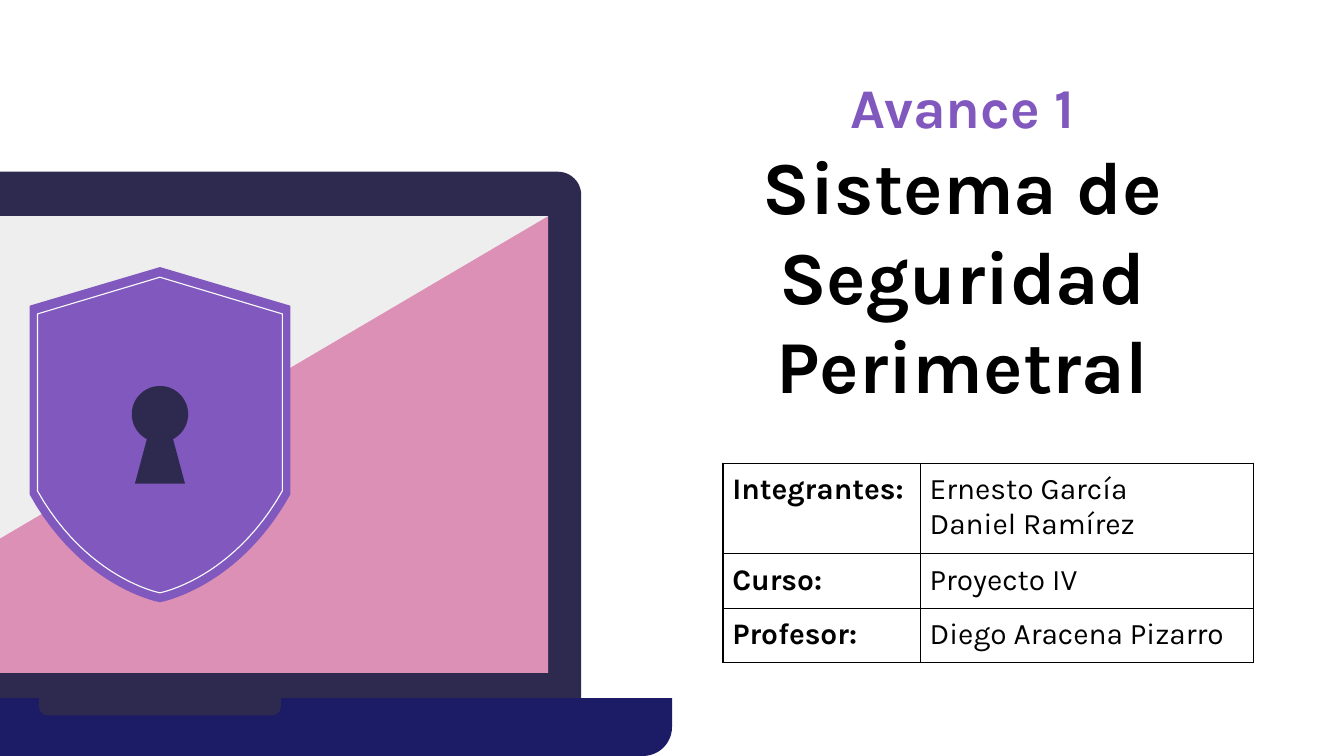
import math

import pptx
import pptx.dml.color
import pptx.enum.shapes
import pptx.enum.text
import pptx.oxml
import pptx.oxml.ns
import pptx.util

Pt = pptx.util.Pt
Shape = pptx.enum.shapes.MSO_SHAPE
Align = pptx.enum.text.PP_ALIGN

COLORS = {
    "black": "000000",
    "frame": "2E294E",
    "base": "1C1C66",
    "pink": "DD90B6",
    "glare": "EEEEEE",
    "purple": "8058BE",
    "outline": "FCFCFC",
}


def rgb(name):
    return pptx.dml.color.RGBColor.from_string(COLORS[name])


def bezier(start, control1, control2, end, steps=24):
    """Points along a cubic curve, both ends included."""
    points = []
    for step in range(steps + 1):
        t = step / steps
        weights = ((1 - t) ** 3, 3 * t * (1 - t) ** 2, 3 * t * t * (1 - t), t ** 3)
        curve = (start, control1, control2, end)
        points.append(tuple(sum(w * p[axis] for w, p in zip(weights, curve))
                            for axis in (0, 1)))
    return points


def mirrored(left_side, center):
    """Close a left-hand outline with its reflection about x = center."""
    return left_side + [(2 * center - x, y) for x, y in reversed(left_side)]


def shield(center, half, top, shoulder, waist, control, tip):
    """Shield outline; control is the curve's handle as (offset, y)."""
    end = (center, tip)
    curve = bezier((center - half, waist), (center - control[0], control[1]), end, end)
    return mirrored([(center, top), (center - half, shoulder)] + curve, center)


def keyhole(center, middle, radius, neck, foot, bottom):
    """Round head on a flared foot; neck and foot are half widths."""
    opening = math.asin(neck / radius)
    angles = [math.pi + (opening - math.pi) * step / 30 for step in range(31)]
    head = [(center - radius * math.sin(a), middle + radius * math.cos(a)) for a in angles]
    return mirrored(head + [(center - foot, bottom)], center)


class SlideBuilder:
    def __init__(self, slide, font):
        self.slide = slide
        self.font = font
        self.drawing = slide.shapes.add_group_shape().shapes

    def paint(self, shape, fill=None, line=None, weight=0.6):
        shape.shadow.inherit = False
        if fill:
            shape.fill.solid()
            shape.fill.fore_color.rgb = rgb(fill)
        else:
            shape.fill.background()
        if line:
            shape.line.color.rgb = rgb(line)
            shape.line.width = Pt(weight)
        else:
            shape.line.fill.background()

    def panel(self, left, top, right, bottom, fill, top_radius=0, bottom_radius=0):
        width, height = right - left, bottom - top
        box = self.drawing.add_shape(Shape.ROUND_2_SAME_RECTANGLE,
                                     Pt(left), Pt(top), Pt(width), Pt(height))
        for index, radius in enumerate((top_radius, bottom_radius)):
            box.adjustments[index] = radius / min(width, height)
        self.paint(box, fill)

    def outline(self, points, fill=None, line=None):
        emu = [(Pt(x), Pt(y)) for x, y in points]
        builder = self.drawing.build_freeform(*emu[0])
        builder.add_line_segments(emu[1:], close=True)
        self.paint(builder.convert_to_shape(), fill, line)

    def set_text(self, frame, lines, align):
        """Fill a frame with (text, size, color, bold) paragraphs."""
        for index, (text, size, color, bold) in enumerate(lines):
            paragraph = frame.add_paragraph() if index else frame.paragraphs[0]
            paragraph.text = text
            paragraph.alignment = align
            paragraph.font.name = self.font
            paragraph.font.size = Pt(size)
            paragraph.font.bold = bold
            paragraph.font.color.rgb = rgb(color)

    def heading(self, left, top, width, height, lines):
        frame = self.slide.shapes.add_textbox(
            Pt(left), Pt(top), Pt(width), Pt(height)).text_frame
        frame.word_wrap = True
        frame.vertical_anchor = pptx.enum.text.MSO_ANCHOR.BOTTOM
        frame.margin_left = frame.margin_right = Pt(7.2)
        frame.margin_top = frame.margin_bottom = Pt(7.2)
        self.set_text(frame, lines, Align.CENTER)

    def border(self, cell, weight=0.75):
        properties = cell._tc.get_or_add_tcPr()
        for index, side in enumerate(("lnL", "lnR", "lnT", "lnB")):
            properties.insert(index, pptx.oxml.parse_xml(
                f'<a:{side} {pptx.oxml.ns.nsdecls("a")} w="{Pt(weight)}">'
                f'<a:solidFill><a:srgbClr val="{COLORS["black"]}"/></a:solidFill>'
                f'</a:{side}>'))

    def table(self, left, top, widths, heights, rows, size):
        """Rows are (label, values), with one paragraph for each value."""
        grid = self.slide.shapes.add_table(
            len(rows), len(widths), Pt(left), Pt(top),
            Pt(sum(widths)), Pt(sum(heights))).table
        grid.first_row = grid.horz_banding = False
        for column, width in zip(grid.columns, widths):
            column.width = Pt(width)
        for row, height, (label, values) in zip(grid.rows, heights, rows):
            row.height = Pt(height)
            for cell, texts, bold in zip(row.cells, ([label], values), (True, False)):
                cell.margin_left = cell.margin_right = Pt(5)
                cell.margin_top = cell.margin_bottom = Pt(5)
                cell.fill.background()
                self.border(cell)
                self.set_text(cell.text_frame,
                              [(text, size, "black", bold) for text in texts],
                              Align.JUSTIFY)


def main():
    deck = pptx.Presentation()
    deck.slide_width, deck.slide_height = Pt(720), Pt(405)
    slide = deck.slides.add_slide(deck.slide_layouts[6])
    cover = SlideBuilder(slide, "Karla")

    # Laptop
    screen_left, screen_top, screen_right, screen_bottom = -122.4, 115.8, 293.6, 360.5
    cover.panel(-140.4, 92, 311.4, 374, "frame", top_radius=12.5)
    cover.panel(screen_left, screen_top, screen_right, screen_bottom, "pink")
    cover.panel(-188.6, 374, 360, 405, "base", bottom_radius=16)
    cover.panel(20.9, 374, 150.5, 383.2, "frame", bottom_radius=5)
    cover.outline([(screen_left, screen_top), (screen_left, screen_bottom),
                   (screen_right, screen_top)], fill="glare")

    # Shield with keyhole
    center = 85.7
    cover.outline(shield(center, 69.8, 143.1, 163.8, 265, (41.8, 315.4), 322.7),
                  fill="purple")
    cover.outline(shield(center, 65.6, 148.5, 168.2, 263, (38.9, 310.3), 317.6),
                  line="outline")
    cover.outline(keyhole(center, 221.9, 15.1, 7, 13.4, 259.1), fill="frame")

    cover.heading(375.1, 113.8, 280.8, 112.3, [
        ("Avance 1", 30, "purple", True),
        ("Sistema de Seguridad Perimetral", 40, "black", True),
    ])
    cover.table(387.3, 248.2, (105.8, 178.6), (47.6, 28.6, 28.6), [
        ("Integrantes:", ["Ernesto García", "Daniel Ramírez"]),
        ("Curso:", ["Proyecto IV"]),
        ("Profesor:", ["Diego Aracena Pizarro"]),
    ], size=16)

    deck.save("out.pptx")


if __name__ == "__main__":
    main()
